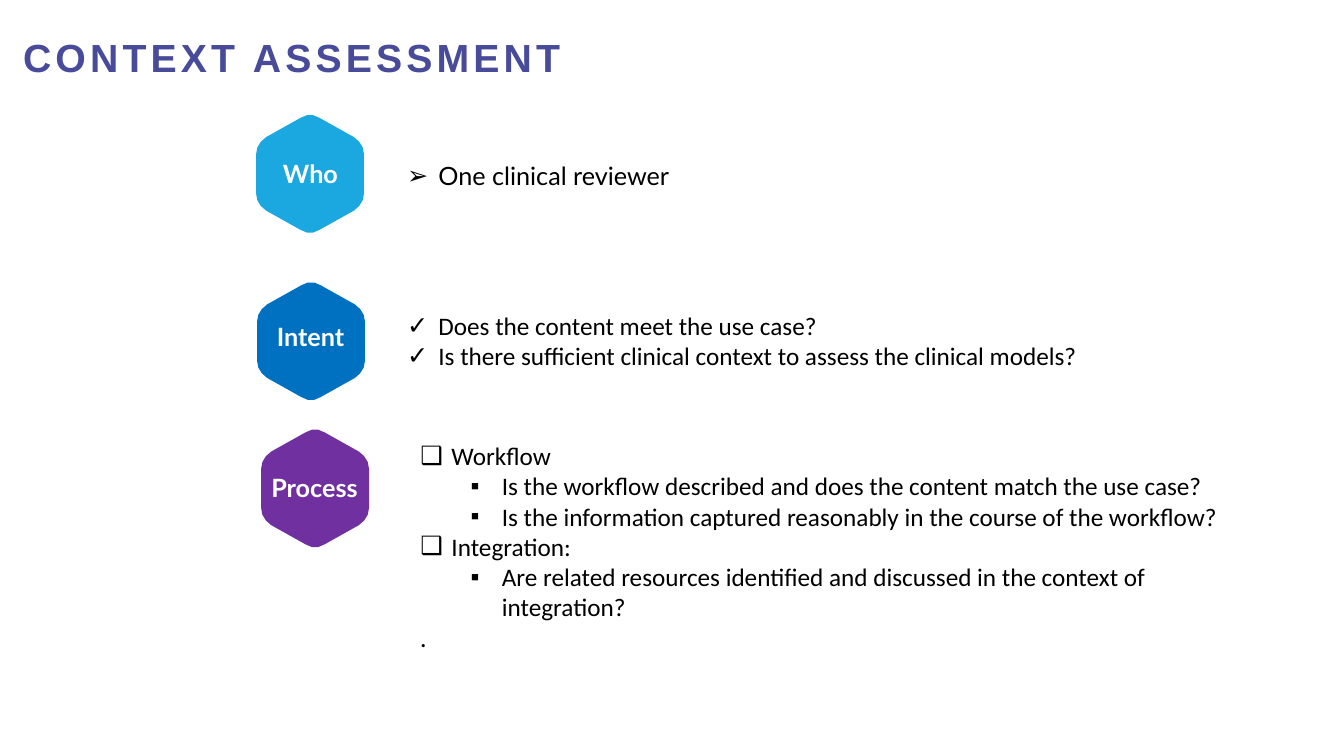
import pptx
import pptx.util
import pptx.dml.color
import pptx.enum.text
import pptx.oxml
import pptx.oxml.ns

Inches = pptx.util.Inches
RGB = pptx.dml.color.RGBColor
ALIGN = pptx.enum.text.PP_ALIGN
ANCHOR = pptx.enum.text.MSO_ANCHOR

INDIGO = RGB(0x48, 0x4B, 0x99)
SKY = RGB(0x1B, 0xA8, 0xE0)
BLUE = RGB(0x00, 0x70, 0xC0)
PURPLE = RGB(0x70, 0x30, 0xA0)
BLACK = RGB(0, 0, 0)
WHITE = RGB(255, 255, 255)

# Content: lines are (level, bullet, font, text)
TITLE = "CONTEXT ASSESSMENT"
WHO = [(0, "➢", "Lato", "One clinical reviewer")]
INTENT = [
    (0, "✓", "Calibri", "Does the content meet the use case?"),
    (0, "✓", "Calibri", "Is there sufficient clinical context to assess the clinical models?"),
]
PROCESS = [
    (0, "❑", "Calibri", "Workflow"),
    (1, "▪", "Calibri", "Is the workflow described and does the content match the use case?"),
    (1, "▪", "Calibri", "Is the information captured reasonably in the course of the workflow?"),
    (0, "❑", "Calibri", "Integration:"),
    (1, "▪", "Calibri", "Are related resources identified and discussed in the context of integration?"),
    (0, None, "Lato", "."),
]
# Label, colour, hexagon corner, label corner, list box, lines
TOPICS = [
    ("Who", SKY, (2.54, 1.13), (2.43, 1.52), (3.94, 1.54, 5.62, 0.4), WHO),
    ("Intent", BLUE, (2.55, 2.79), (2.43, 3.14), (3.94, 3.03, 7.35, 0.71), INTENT),
    ("Process", PURPLE, (2.59, 4.25), (2.47, 4.64), (4.07, 4.32, 8.34, 2.22), PROCESS),
]

# Hexagon: one Bezier curve for each rounded corner, in inches
WIDE, HIGH, STEPS = 1.07, 1.19, 3
TOP = [(0.44, 0.04), (0.5, 0), (0.57, 0), (0.63, 0.04)]
SIDE = [(0.97, 0.23), (1.03, 0.27), (1.07, 0.33), (1.07, 0.4)]


def flip(curve):
    return [(x, HIGH - y) for x, y in reversed(curve)]


def turn(curve):
    return [(WIDE - x, HIGH - y) for x, y in curve]


RIGHT = [TOP, SIDE, flip(SIDE)]
CORNERS = RIGHT + [turn(curve) for curve in RIGHT]


def bezier(curve, t):
    parts = ((1 - t) ** 3, 3 * t * (1 - t) ** 2, 3 * t * t * (1 - t), t ** 3)
    return [sum(w * p[axis] for w, p in zip(parts, curve)) for axis in (0, 1)]


def add_hex(slide, left, top, color):
    points = []
    for curve in CORNERS:
        for i in range(STEPS + 1):
            x, y = bezier(curve, i / STEPS)
            points.append((Inches(left + x), Inches(top + y)))
    pen = slide.shapes.build_freeform(*points[0])
    pen.add_line_segments(points[1:], close=True)
    shape = pen.convert_to_shape()
    shape.shadow.inherit = False
    shape.fill.solid()
    shape.fill.fore_color.rgb = color
    shape.line.fill.background()


def add_bullet(para, level, mark):
    props = para._p.get_or_add_pPr()
    props.set("marL", str(Inches(0.31 + 0.5 * level)))
    props.set("indent", str(Inches(-0.31)))
    space = pptx.oxml.ns.nsdecls("a")
    for item in ('buFont {} typeface="Arial"', f'buChar {{}} char="{mark}"'):
        props.append(pptx.oxml.parse_xml(f"<a:{item.format(space)}/>"))


def style(para, name, size, color, bold=False):
    font = para.font
    font.name, font.size, font.bold = name, pptx.util.Pt(size), bold
    font.color.rgb = color


def add_box(slide, box):
    frame = slide.shapes.add_textbox(*map(Inches, box)).text_frame
    frame.word_wrap = True
    return frame


def add_list(slide, box, lines):
    frame = add_box(slide, box)
    for i, (level, mark, name, text) in enumerate(lines):
        para = frame.add_paragraph() if i else frame.paragraphs[0]
        para.text = text
        para.level = level
        if mark:
            add_bullet(para, level, mark)
        style(para, name, 18, BLACK)


def add_label(slide, left, top, text):
    para = add_box(slide, (left, top, 1.3, 0.4)).paragraphs[0]
    para.text = text
    para.alignment = ALIGN.CENTER
    style(para, "Lato", 18, WHITE, True)


def add_title(slide):
    frame = add_box(slide, (0.13, 0.15, 12.29, 0.88))
    frame.vertical_anchor = ANCHOR.MIDDLE
    para = frame.paragraphs[0]
    para.text = TITLE
    para.line_spacing = 0.9
    style(para, "Arial", 28, INDIGO, True)
    para.runs[0]._r.get_or_add_rPr().set("spc", "300")


def main():
    deck = pptx.Presentation()
    deck.slide_width, deck.slide_height = Inches(13.33), Inches(7.5)
    slide = deck.slides.add_slide(deck.slide_layouts[6])
    add_title(slide)
    for label, color, spot, place, box, lines in TOPICS:
        add_hex(slide, *spot, color)
        add_label(slide, *place, label)
        add_list(slide, box, lines)
    deck.save("out.pptx")


if __name__ == "__main__":
    main()
